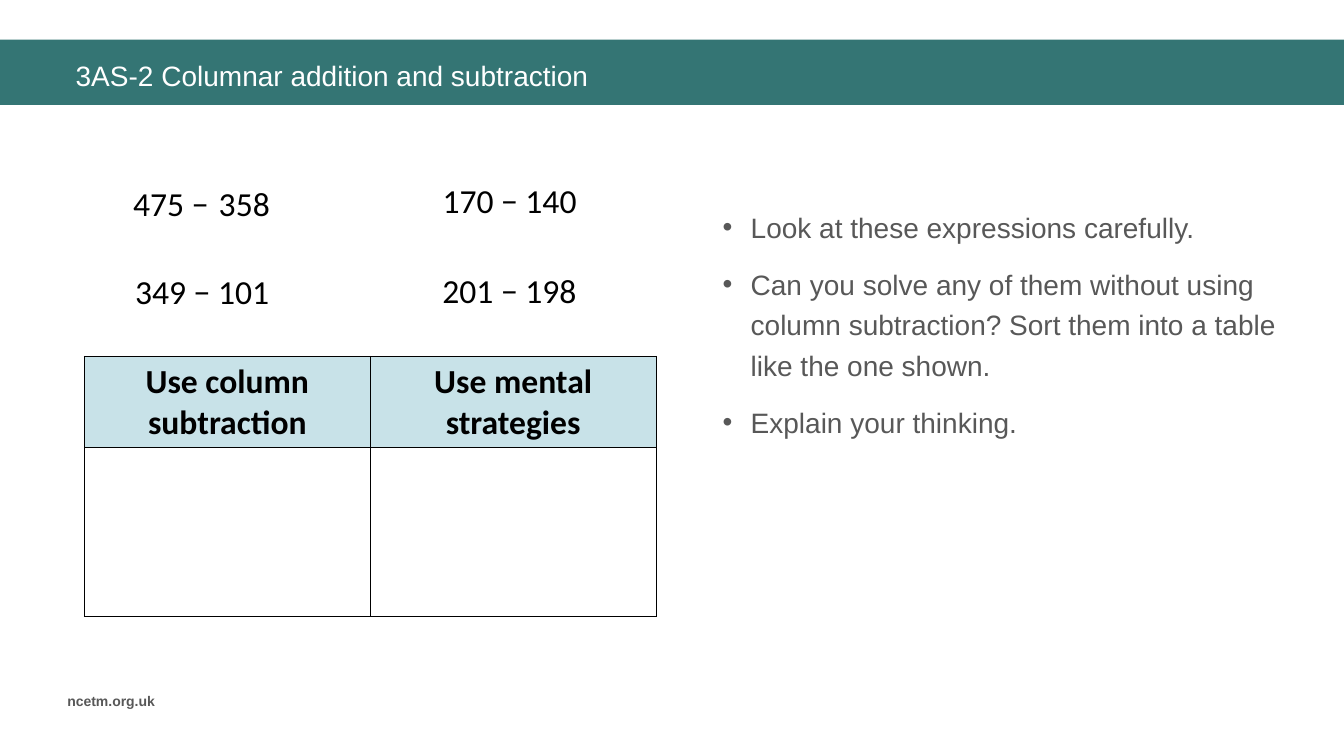
from lxml.etree import SubElement
from pptx import Presentation
from pptx.dml.color import RGBColor
from pptx.enum.shapes import MSO_SHAPE
from pptx.enum.text import MSO_ANCHOR, MSO_AUTO_SIZE, PP_ALIGN
from pptx.oxml.ns import qn
from pptx.util import Pt

COLOURS = {
    "teal": "347574",
    "pale": "C8E2E8",
    "white": "FFFFFF",
    "black": "000000",
    "grey": "585858",
}
WIDTH, HEIGHT = 960, 540


def colour(name):
    return RGBColor.from_string(COLOURS[name])


class LessonSlide:
    heading_font = "Arial"
    maths_font = "Calibri"

    def __init__(self, deck):
        self.page = deck.slides.add_slide(deck.slide_layouts[1])

    def place(self, shape, left, top, width, height):
        shape.left, shape.top = Pt(left), Pt(top)
        shape.width, shape.height = Pt(width), Pt(height)

    def style(self, para, font, size, ink, bold=False):
        for span in para.runs:
            span.font.name = font
            span.font.size = Pt(size)
            span.font.bold = bold
            span.font.color.rgb = colour(ink)

    def band(self, top, height):
        bar = self.page.shapes.add_shape(
            MSO_SHAPE.RECTANGLE, 0, Pt(top), Pt(WIDTH), Pt(height))
        bar.shadow.inherit = False
        bar.fill.solid()
        bar.fill.fore_color.rgb = colour("teal")
        bar.line.fill.background()
        self.page.shapes._spTree.insert(2, bar._element)

    def title(self, text, *bounds):
        box = self.page.shapes.title
        self.place(box, *bounds)
        frame = box.text_frame
        frame.text = text
        frame.auto_size = MSO_AUTO_SIZE.NONE
        frame.vertical_anchor = MSO_ANCHOR.MIDDLE
        para = frame.paragraphs[0]
        para.alignment = PP_ALIGN.LEFT
        self.style(para, self.heading_font, 20, "white")

    def bullets(self, lines, *bounds):
        box = self.page.placeholders[1]
        self.place(box, *bounds)
        frame = box.text_frame
        frame.text = "\n".join(lines)
        frame.auto_size = MSO_AUTO_SIZE.NONE
        for index, para in enumerate(frame.paragraphs):
            properties = para._p.get_or_add_pPr()
            properties.set("marL", str(Pt(20)))
            properties.set("indent", str(-Pt(20)))
            tint = SubElement(properties, qn("a:buClr"))
            SubElement(tint, qn("a:srgbClr"), val=COLOURS["grey"])
            SubElement(properties, qn("a:buFont"), typeface=self.heading_font)
            SubElement(properties, qn("a:buChar"), char="•")
            para.line_spacing = 1.2
            para.space_before = Pt(6 if index else 0)
            para.space_after = Pt(6)
            self.style(para, self.heading_font, 20, "grey")

    def text_box(self, text, *bounds):
        box = self.page.shapes.add_textbox(*map(Pt, bounds))
        box.text_frame.word_wrap = True
        para = box.text_frame.paragraphs[0]
        para.text = text
        return para

    def footer(self, text, *bounds):
        para = self.text_box(text, *bounds)
        self.style(para, self.heading_font, 10, "grey", True)

    def expression(self, text, *bounds):
        para = self.text_box(text, *bounds)
        para.alignment = PP_ALIGN.CENTER
        self.style(para, self.maths_font, 24, "black")
        return para

    def wide_gap_expression(self, start, end, *bounds):
        para = self.expression(start, *bounds)
        for text in (" ", end):
            para.add_run().text = text
        self.style(para, self.maths_font, 24, "black")
        para.runs[1].font.size = Pt(32)

    def cell_borders(self, cell):
        properties = cell._tc.get_or_add_tcPr()
        for index, side in enumerate(("lnL", "lnR", "lnT", "lnB")):
            line = properties.makeelement(qn(f"a:{side}"), {"w": str(Pt(1))})
            fill = SubElement(line, qn("a:solidFill"))
            SubElement(fill, qn("a:srgbClr"), val=COLOURS["black"])
            properties.insert(index, line)

    def sorting_table(self, headings, row_heights, left, top, width):
        table = self.page.shapes.add_table(
            len(row_heights), len(headings), Pt(left), Pt(top),
            Pt(width), Pt(sum(row_heights))).table
        for row, height in zip(table.rows, row_heights):
            row.height = Pt(height)
        for cell in table.iter_cells():
            cell.fill.solid()
            cell.fill.fore_color.rgb = colour("white")
            self.cell_borders(cell)
        for column, heading in enumerate(headings):
            cell = table.cell(0, column)
            cell.fill.fore_color.rgb = colour("pale")
            cell.vertical_anchor = MSO_ANCHOR.MIDDLE
            cell.text = heading
            para = cell.text_frame.paragraphs[0]
            para.alignment = PP_ALIGN.CENTER
            self.style(para, self.maths_font, 24, "black", True)


def main():
    deck = Presentation()
    deck.slide_width, deck.slide_height = Pt(WIDTH), Pt(HEIGHT)
    lesson = LessonSlide(deck)
    lesson.band(28.3, 46.7)
    lesson.footer("ncetm.org.uk", 41, 491, 87, 19.5)
    lesson.sorting_table(
        ["Use column subtraction", "Use mental strategies"],
        [65, 120.5], 60.3, 254.7, 408.4)
    lesson.title("3AS-2 Columnar addition and subtraction",
                 46.8, 36.7, 887, 33.8)
    lesson.wide_gap_expression("475 −", "358", 69.8, 118.8, 148.3, 46)
    lesson.expression("201 − 198", 295.9, 189.4, 136, 36)
    lesson.expression("170 − 140", 301.7, 125.3, 124.6, 36)
    lesson.expression("349 − 101", 78.5, 190, 131.8, 36)
    lesson.bullets([
        "Look at these expressions carefully.",
        "Can you solve any of them without using column subtraction? "
        "Sort them into a table like the one shown.",
        "Explain your thinking.",
    ], 509, 141.8, 424.8, 162.7)
    deck.save("out.pptx")


if __name__ == "__main__":
    main()
